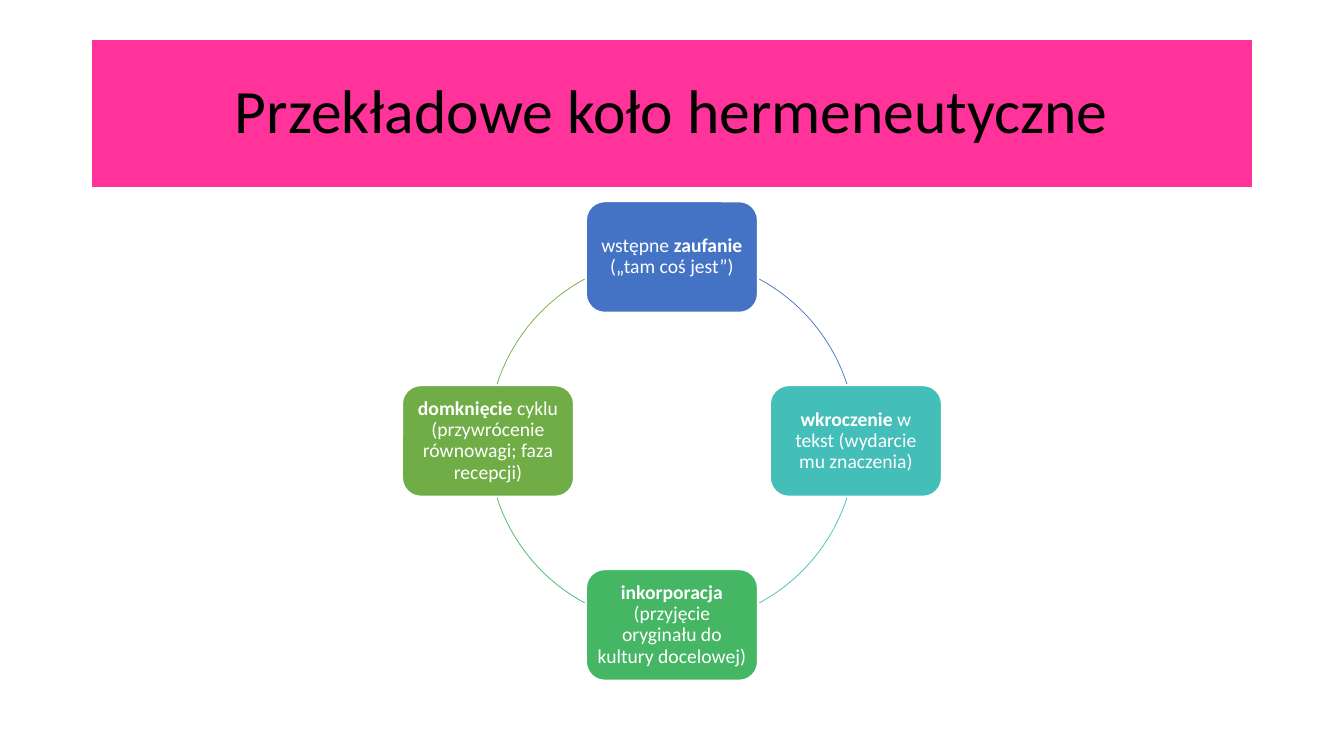
from dataclasses import dataclass
from math import cos, radians, sin

from pptx import Presentation
from pptx.dml.color import RGBColor
from pptx.enum.shapes import MSO_SHAPE
from pptx.enum.text import MSO_ANCHOR, PP_ALIGN
from pptx.shapes.autoshape import Shape
from pptx.slide import Slide
from pptx.util import Pt

RECT = MSO_SHAPE.RECTANGLE
ROUND = MSO_SHAPE.ROUNDED_RECTANGLE
ARC = MSO_SHAPE.ARC
MIDDLE = MSO_ANCHOR.MIDDLE
CENTER = PP_ALIGN.CENTER

WHITE = RGBColor(0xFF, 0xFF, 0xFF)
BLACK = RGBColor(0x00, 0x00, 0x00)
PINK = RGBColor(0xFF, 0x33, 0x99)
BLUE = RGBColor(0x44, 0x72, 0xC4)
TEAL = RGBColor(0x43, 0xBE, 0xB9)
GREEN = RGBColor(0x45, 0xB6, 0x64)
OLIVE = RGBColor(0x70, 0xAD, 0x47)

FONT = "Calibri"
MID_X, MID_Y, RADIUS = 480, 315, 131.4
BOX_W, BOX_H = 122.4, 79.2
INSET = 4.2


@dataclass
class Run:
    text: str
    bold: bool = False


@dataclass
class Stage:
    color: RGBColor
    runs: list[Run]
    angle: float  # box centre, degrees clockwise from the right
    start: float  # arc to the next box
    end: float


STAGES = [
    Stage(BLUE, [Run("wstępne "), Run("zaufanie", True),
                 Run(" („tam coś jest”)")], 270, 298.3, 342),
    Stage(TEAL, [Run("wkroczenie", True),
                 Run(" w tekst (wydarcie mu znaczenia)")], 0, 18, 61.7),
    Stage(GREEN, [Run("inkorporacja", True),
                  Run(" (przyjęcie oryginału do kultury docelowej)")],
          90, 118.3, 162),
    Stage(OLIVE, [Run("domknięcie", True),
                  Run(" cyklu (przywrócenie równowagi; faza recepcji)")],
          180, 198, 241.7),
]


def add_box(slide: Slide, kind: MSO_SHAPE, left: float, top: float,
            width: float, height: float, line: RGBColor,
            weight: float) -> Shape:
    shape = slide.shapes.add_shape(kind, Pt(left), Pt(top),
                                   Pt(width), Pt(height))
    shape.shadow.inherit = False
    shape.line.color.rgb = line
    shape.line.width = Pt(weight)
    return shape


def fill_box(shape: Shape, color: RGBColor) -> None:
    shape.fill.solid()
    shape.fill.fore_color.rgb = color


def add_text(shape: Shape, runs: list[Run], size: float,
             color: RGBColor) -> None:
    frame = shape.text_frame
    frame.word_wrap = True
    frame.vertical_anchor = MIDDLE
    para = frame.paragraphs[0]
    para.alignment = CENTER
    para.line_spacing = 0.9
    for item in runs:
        run = para.add_run()
        run.text = item.text
        run.font.name = FONT
        run.font.size = Pt(size)
        run.font.bold = item.bold
        run.font.color.rgb = color


def add_stage(slide: Slide, stage: Stage) -> None:
    turn = radians(stage.angle)
    left = MID_X + RADIUS * cos(turn) - BOX_W / 2
    top = MID_Y + RADIUS * sin(turn) - BOX_H / 2
    box = add_box(slide, ROUND, left, top, BOX_W, BOX_H, WHITE, 1)
    fill_box(box, stage.color)
    frame = box.text_frame
    frame.margin_left = frame.margin_right = Pt(INSET)
    frame.margin_top = frame.margin_bottom = Pt(INSET)
    add_text(box, stage.runs, 14, WHITE)

    # Arc to the next stage; a degree is 0.6 adjustment units
    arc = add_box(slide, ARC, MID_X - RADIUS, MID_Y - RADIUS,
                  2 * RADIUS, 2 * RADIUS, stage.color, 0.5)
    arc.fill.background()
    arc.adjustments[0] = stage.start * 0.6
    arc.adjustments[1] = stage.end * 0.6


def main() -> None:
    deck = Presentation()
    deck.slide_width, deck.slide_height = Pt(960), Pt(540)
    slide = deck.slides.add_slide(deck.slide_layouts[6])

    # Cycle
    for stage in STAGES:
        add_stage(slide, stage)

    # Title
    title = add_box(slide, RECT, 66, 28.75, 828, 104.4, PINK, 0.75)
    fill_box(title, PINK)
    add_text(title, [Run("Przekładowe koło hermeneutyczne")], 44, BLACK)

    deck.save("out.pptx")


if __name__ == "__main__":
    main()
